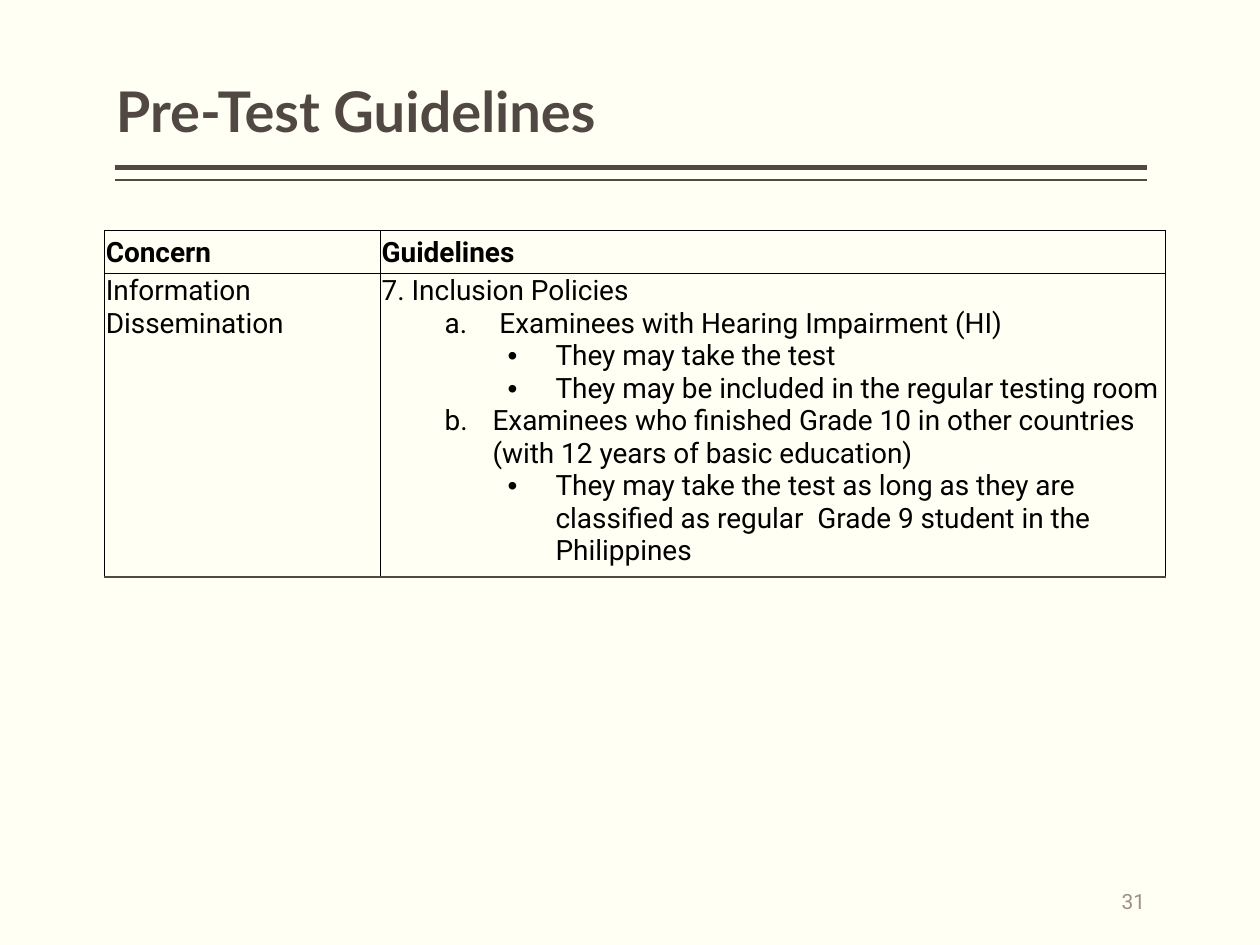
from lxml.etree import SubElement
from pptx import Presentation
from pptx.dml.color import RGBColor
from pptx.enum.text import MSO_ANCHOR, PP_ALIGN
from pptx.oxml import parse_xml
from pptx.oxml.ns import nsdecls, qn
from pptx.util import Inches, Pt

IVORY = RGBColor(0xFF, 0xFF, 0xF3)
BROWN = RGBColor(0x51, 0x48, 0x43)
TAUPE = RGBColor(0x9D, 0x8F, 0x88)
BLACK = RGBColor(0, 0, 0)

LETTER = ("buAutoNum", {"type": "alphaLcPeriod"})
DOT = ("buChar", {"char": "•"})
LIST_STYLES = {0: (0, None), 1: (0.88, LETTER), 2: (1.38, DOT)}
HANGING = 0.38

HEADINGS = ["Concern", "Guidelines"]
CONCERN = [(0, "Information Dissemination")]
GUIDELINES = [
    (0, "7. Inclusion Policies"),
    (1, " Examinees with Hearing Impairment (HI)"),
    (2, "They may take the test"),
    (2, "They may be included in the regular testing room"),
    (1, "Examinees who finished Grade 10 in other countries "
        "(with 12 years of basic education)"),
    (2, "They may take the test as long as they are classified as regular  "
        "Grade 9 student in the Philippines"),
]


def set_font(paragraph, name, size, color, bold=False):
    """Set the font of a whole paragraph."""
    font = paragraph.font
    font.name, font.size, font.bold = name, Pt(size), bold
    font.color.rgb = color


def add_label(slide, box, text, anchor):
    """Add a one-line text box and return its paragraph."""
    frame = slide.shapes.add_textbox(*map(Inches, box)).text_frame
    frame.word_wrap = True
    frame.vertical_anchor = anchor
    frame.margin_left = frame.margin_right = 0
    paragraph = frame.paragraphs[0]
    paragraph.text = text
    return paragraph


def add_title(slide, box):
    """Place the slide title in its box."""
    title = add_label(slide, box, "Pre-Test Guidelines", MSO_ANCHOR.BOTTOM)
    title.line_spacing = 0.9
    set_font(title, "Lato", 32, BROWN, True)


def add_double_rule(slide, left, top, width, gap):
    """Draw a thick rule with a thin one below it."""
    for row, weight in enumerate((3, 1)):
        y = Inches(top + row * gap)
        rule = slide.shapes.add_connector(1, Inches(left), y, Inches(left + width), y)
        rule.line.color.rgb = BROWN
        rule.line.width = Pt(weight)
        SubElement(rule._element.spPr, qn("a:effectLst"))


def add_page_number(slide, box):
    """Place the page number, aligned right in its box."""
    number = add_label(slide, box, "31", MSO_ANCHOR.MIDDLE)
    number.alignment = PP_ALIGN.RIGHT
    set_font(number, "Roboto", 12, TAUPE)


def set_borders(cell, bottom):
    """Draw thin black borders, with the given colour and weight below."""
    edge = (BLACK, 0.5)
    borders = zip(("lnL", "lnR", "lnT", "lnB"), (edge, edge, edge, bottom))
    for index, (tag, (color, weight)) in enumerate(borders):
        cell._tc.get_or_add_tcPr().insert(index, parse_xml(
            f'<a:{tag} {nsdecls("a")} w="{Pt(weight)}"><a:solidFill>'
            f'<a:srgbClr val="{color}"/></a:solidFill></a:{tag}>'))


def set_list_style(paragraph, level):
    """Give a paragraph the indent and marker of its outline level."""
    indent, marker = LIST_STYLES[level]
    if marker:
        tag, attributes = marker
        paragraph.level = level
        properties = paragraph._p.get_or_add_pPr()
        properties.set("marL", str(Inches(indent)))
        properties.set("indent", str(Inches(-HANGING)))
        SubElement(properties, qn("a:buFont"), typeface="Arial")
        SubElement(properties, qn(f"a:{tag}"), attributes)


def fill_cell(cell, items, anchor, bold, bottom):
    """Write outline items into a cell and style it."""
    cell.fill.background()
    cell.vertical_anchor = anchor
    cell.margin_left = cell.margin_right = cell.margin_top = Inches(0.01)
    cell.margin_bottom = 0
    set_borders(cell, bottom)
    frame = cell.text_frame
    for index, (level, text) in enumerate(items):
        paragraph = frame.add_paragraph() if index else frame.paragraphs[0]
        paragraph.text = text
        set_font(paragraph, "Roboto", 16, BLACK, bold)
        set_list_style(paragraph, level)


def add_guidelines_table(slide, box):
    """Place the table of concerns and guidelines in its box."""
    left, top, width, height = map(Inches, box)
    table = slide.shapes.add_table(2, 2, left, top, width, height).table
    table.horz_banding = table.first_row = False
    table.columns[0].width = Inches(2.19)
    table.columns[1].width = width - Inches(2.19)
    table.rows[0].height = Inches(0.34)
    table.rows[1].height = height - Inches(0.34)
    for column, heading in enumerate(HEADINGS):
        fill_cell(table.cell(0, column), [(0, heading)], MSO_ANCHOR.MIDDLE,
                  True, (BLACK, 0.5))
    for column, items in enumerate((CONCERN, GUIDELINES)):
        fill_cell(table.cell(1, column), items, MSO_ANCHOR.TOP, False, (BROWN, 1))


def main():
    """Build the slide and save it."""
    deck = Presentation()
    deck.slide_width, deck.slide_height = Inches(10), Inches(7.5)
    slide = deck.slides.add_slide(deck.slide_layouts[6])
    slide.background.fill.solid()
    slide.background.fill.fore_color.rgb = IVORY
    add_double_rule(slide, 0.91, 1.33, 8.19, 0.1)
    add_title(slide, (0.92, 0.33, 8.5, 0.87))
    add_page_number(slide, (7.59, 6.95, 1.5, 0.4))
    add_guidelines_table(slide, (0.83, 1.83, 8.42, 2.4))
    deck.save("out.pptx")


if __name__ == "__main__":
    main()
